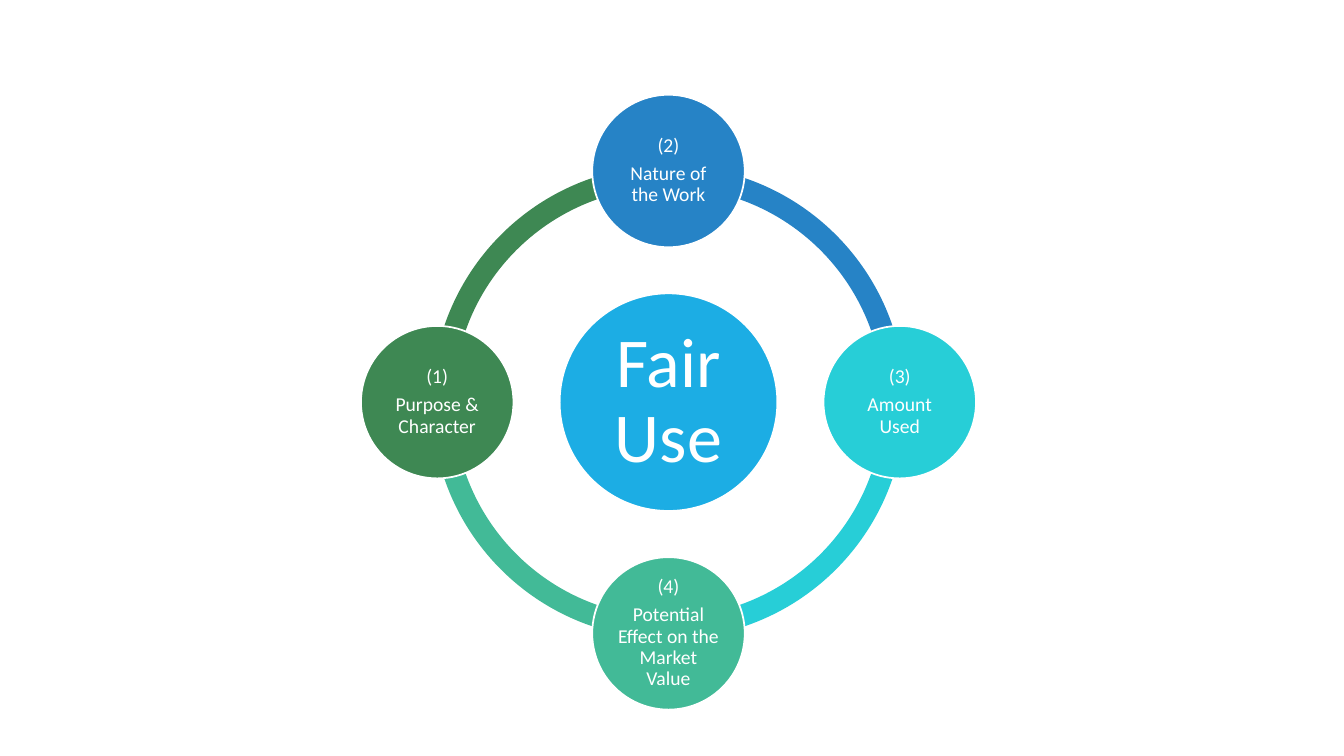
from math import cos, radians, sin

from pptx import Presentation
from pptx import util as u
from pptx.dml.color import RGBColor
from pptx.enum import shapes, text

KIND = shapes.MSO_SHAPE
WHITE = "FFFFFF"
# angle clockwise from the right, colour, label
FACTORS = [
    (180, "3E8853", ["(1)", "Purpose & Character"]),
    (270, "2683C6", ["(2)", "Nature of the Work"]),
    (0, "27CED7", ["(3)", "Amount Used"]),
    (90, "42BA97", ["(4)", "Potential Effect on the Market Value"]),
]


def paint(fill, color):
    fill.solid()
    fill.fore_color.rgb = RGBColor.from_string(color)


def add_round(group, kind, x, y, size, color):
    """Add a plain shape of equal width and height, centred on x, y."""
    left, top = int(x - size / 2), int(y - size / 2)
    shape = group.shapes.add_shape(kind, left, top, int(size), int(size))
    shape.shadow.inherit = False
    paint(shape.fill, color)
    shape.line.fill.background()
    return shape


def add_disc(group, x, y, size, color, lines, points, inset):
    disc = add_round(group, KIND.OVAL, x, y, size, color)
    paint(disc.line.fill, WHITE)
    disc.line.width = u.Pt(1.25)
    frame = disc.text_frame
    frame.word_wrap = True
    frame.vertical_anchor = text.MSO_ANCHOR.MIDDLE
    frame.margin_left = frame.margin_right = u.Inches(inset)
    frame.margin_top = frame.margin_bottom = u.Inches(inset)
    frame.text = "\n".join(lines)
    for para in frame.paragraphs:
        para.alignment = text.PP_ALIGN.CENTER
        para.line_spacing = 0.9
        para.space_after = u.Pt(0.35 * points)
        font = para.runs[0].font
        font.name, font.size = "Calibri", u.Pt(points)
        paint(font.fill, WHITE)


def add_cycle(slide, left, top, size):
    """Place the ring, the hub and the four factors in a square box."""
    group = slide.shapes.add_group_shape()
    x, y = left + size / 2, top + size / 2
    node = size * 0.248
    reach = (size - node) / 2

    for angle, color, _ in FACTORS:
        arc = add_round(group, KIND.BLOCK_ARC, x, y, size * 0.77, color)
        # Angles are stored in 60000ths of a degree, scaled by 100000
        arc.adjustments[0] = angle * 0.6
        arc.adjustments[1] = (angle + 90) % 360 * 0.6
        arc.adjustments[2] = 0.046

    add_disc(group, x, y, size * 0.354, "1CADE4", ["Fair Use"], 50, 0.07)
    for angle, color, lines in FACTORS:
        turn = radians(angle)
        add_disc(group, x + reach * cos(turn), y + reach * sin(turn),
                 node, color, lines, 14, 0.02)


def main():
    deck = Presentation()
    deck.slide_width, deck.slide_height = u.Inches(13.33), u.Inches(7.5)
    slide = deck.slides.add_slide(deck.slide_layouts[6])
    add_cycle(slide, u.Inches(3.58), u.Inches(0.94), u.Inches(6.1))
    deck.save("out.pptx")


if __name__ == "__main__":
    main()
